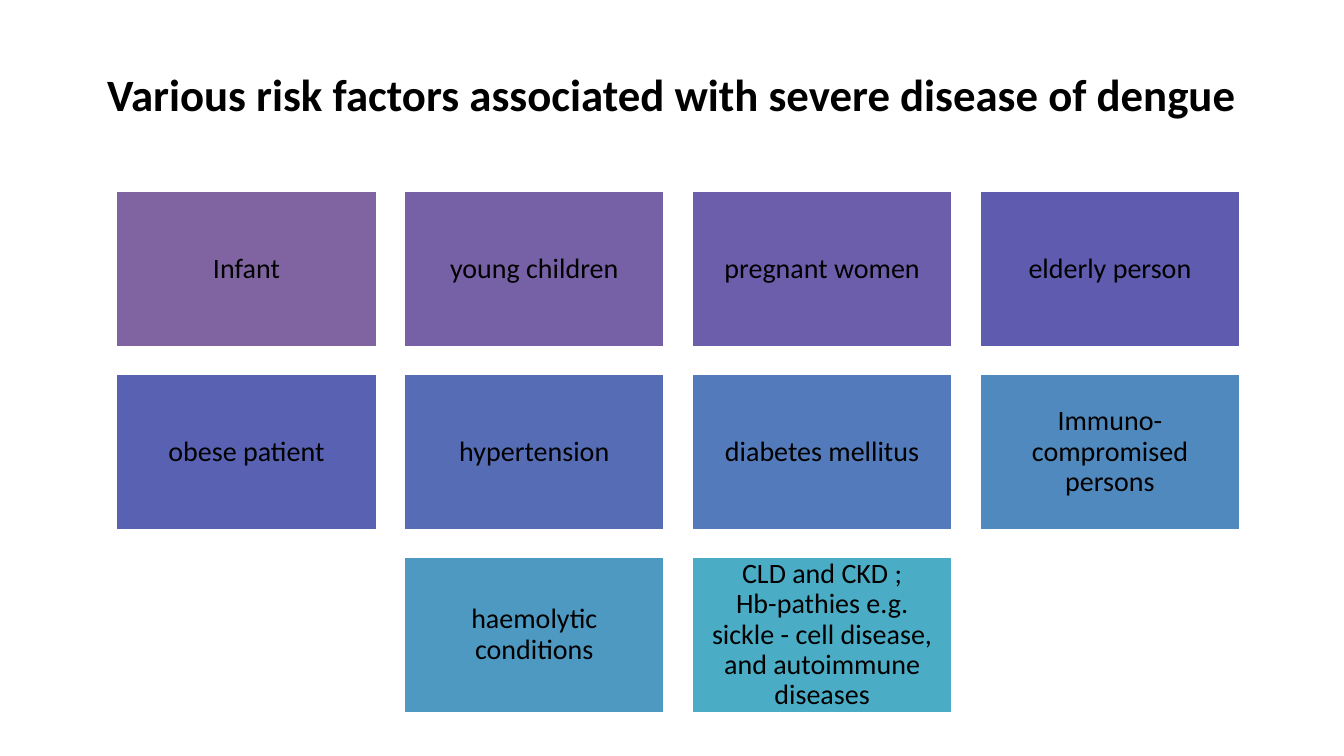
from dataclasses import dataclass

from pptx import Presentation
from pptx.dml.color import RGBColor
from pptx.enum.shapes import MSO_SHAPE
from pptx.enum.text import MSO_ANCHOR, PP_ALIGN
from pptx.slide import Slide
from pptx.text.text import TextFrame
from pptx.util import Length, Pt

FONT = "Calibri"
BLACK = RGBColor(0x00, 0x00, 0x00)
WHITE = RGBColor(0xFF, 0xFF, 0xFF)
PURPLE = RGBColor(0x80, 0x64, 0xA2)
VIOLET = RGBColor(0x77, 0x61, 0xA6)
DEEP_VIOLET = RGBColor(0x6C, 0x5E, 0xAA)
INDIGO = RGBColor(0x5F, 0x5B, 0xAE)
BLUE_INDIGO = RGBColor(0x59, 0x61, 0xB2)
ROYAL_BLUE = RGBColor(0x56, 0x6D, 0xB6)
MID_BLUE = RGBColor(0x53, 0x7A, 0xBA)
STEEL_BLUE = RGBColor(0x50, 0x89, 0xBE)
SKY_BLUE = RGBColor(0x4E, 0x99, 0xC2)
TEAL = RGBColor(0x4B, 0xAC, 0xC6)

COLUMNS = 4
GRID_LEFT, GRID_TOP = Pt(82.8), Pt(136.1)
TILE_WIDTH, TILE_HEIGHT = Pt(186.5), Pt(112.2)
COLUMN_STEP, ROW_STEP = Pt(205.6), Pt(130.7)
TILE_INSET = Pt(6)


@dataclass(frozen=True)
class RiskFactor:
    label: str
    color: RGBColor


RISK_FACTORS = [
    RiskFactor("Infant", PURPLE),
    RiskFactor("young children", VIOLET),
    RiskFactor("pregnant women", DEEP_VIOLET),
    RiskFactor("elderly person", INDIGO),
    RiskFactor("obese patient", BLUE_INDIGO),
    RiskFactor("hypertension", ROYAL_BLUE),
    RiskFactor("diabetes mellitus", MID_BLUE),
    RiskFactor("Immuno-compromised persons", STEEL_BLUE),
    RiskFactor("haemolytic conditions", SKY_BLUE),
    RiskFactor(
        "CLD and CKD ;\vHb-pathies e.g.\vsickle - cell disease, and autoimmune diseases",
        TEAL,
    ),
]


def write_text(
    frame: TextFrame,
    text: str,
    *,
    size: Length,
    bold: bool = False,
    line_spacing: float = 1.0,
) -> None:
    """Fill the frame with one centred paragraph; a vertical tab breaks the line."""
    frame.word_wrap = True
    frame.vertical_anchor = MSO_ANCHOR.MIDDLE
    paragraph = frame.paragraphs[0]
    paragraph.text = text
    paragraph.alignment = PP_ALIGN.CENTER
    paragraph.line_spacing = line_spacing
    for run in paragraph.runs:
        run.font.name = FONT
        run.font.size = size
        run.font.bold = bold
        run.font.color.rgb = BLACK


def add_title(slide: Slide, text: str) -> None:
    title = slide.shapes.title
    title.left, title.top = Pt(48), Pt(21.6)
    title.width, title.height = Pt(864), Pt(90)
    write_text(title.text_frame, text, size=Pt(32), bold=True)


def add_tile(slide: Slide, factor: RiskFactor, left: Length, top: Length) -> None:
    tile = slide.shapes.add_shape(
        MSO_SHAPE.RECTANGLE, left, top, TILE_WIDTH, TILE_HEIGHT
    )
    tile.shadow.inherit = False
    tile.fill.solid()
    tile.fill.fore_color.rgb = factor.color
    tile.line.color.rgb = WHITE
    tile.line.width = Pt(2)
    frame = tile.text_frame
    frame.margin_left = frame.margin_right = TILE_INSET
    frame.margin_top = frame.margin_bottom = TILE_INSET
    write_text(frame, factor.label, size=Pt(20), line_spacing=0.9)


def add_tiles(slide: Slide, factors: list[RiskFactor]) -> None:
    """Lay the tiles out in rows, centring a row that is not full."""
    for row, start in enumerate(range(0, len(factors), COLUMNS)):
        row_factors = factors[start:start + COLUMNS]
        indent = (COLUMNS - len(row_factors)) * COLUMN_STEP // 2
        for column, factor in enumerate(row_factors):
            left = GRID_LEFT + indent + column * COLUMN_STEP
            add_tile(slide, factor, left, GRID_TOP + row * ROW_STEP)


def main() -> None:
    presentation = Presentation()
    presentation.slide_width, presentation.slide_height = Pt(960), Pt(540)
    title_only = presentation.slide_layouts.get_by_name("Title Only")
    slide = presentation.slides.add_slide(title_only)
    add_title(slide, "Various risk factors associated with severe disease of dengue")
    add_tiles(slide, RISK_FACTORS)
    presentation.save("out.pptx")


if __name__ == "__main__":
    main()
